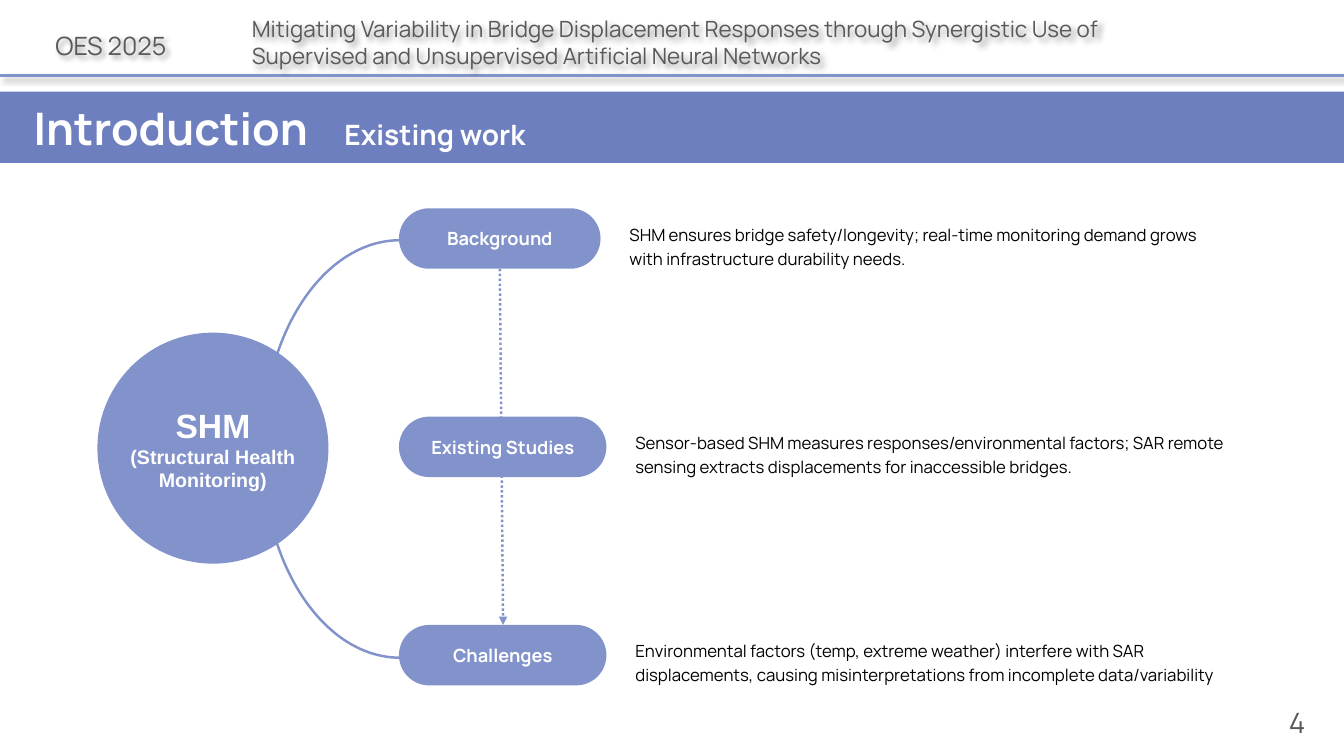
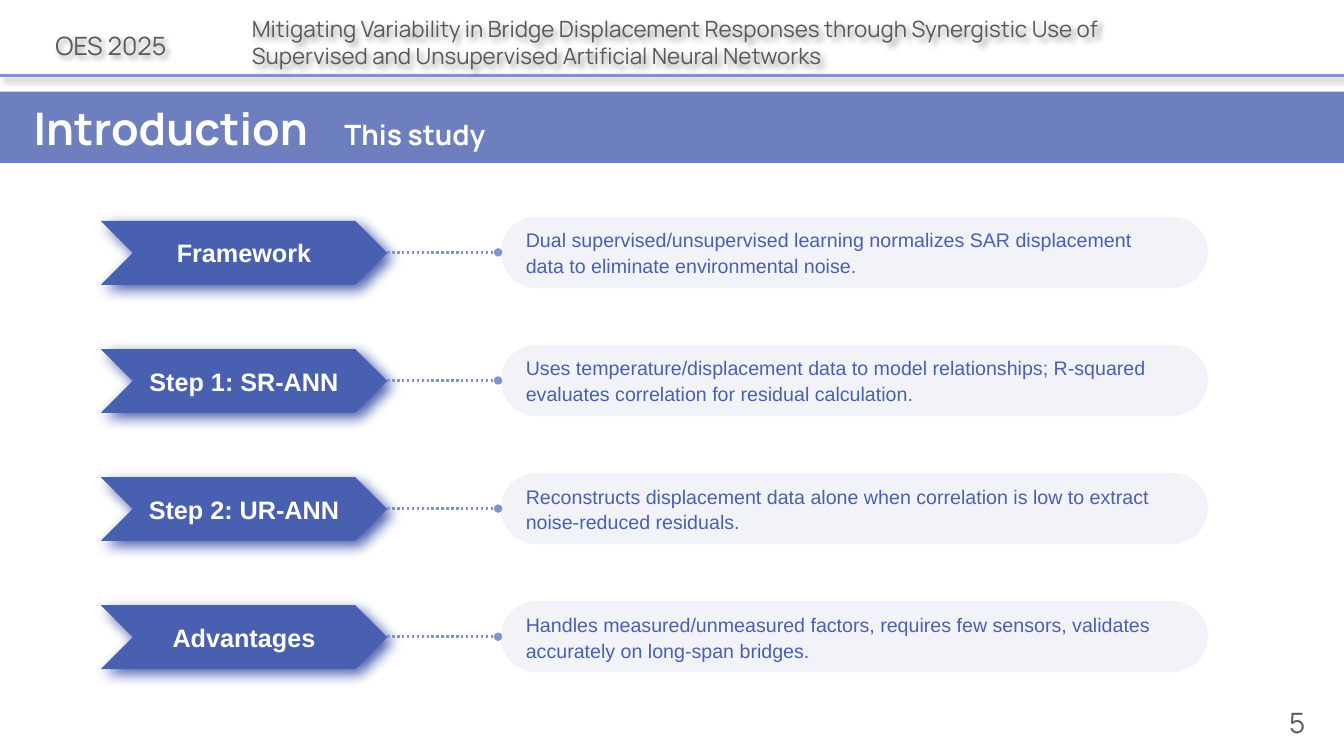
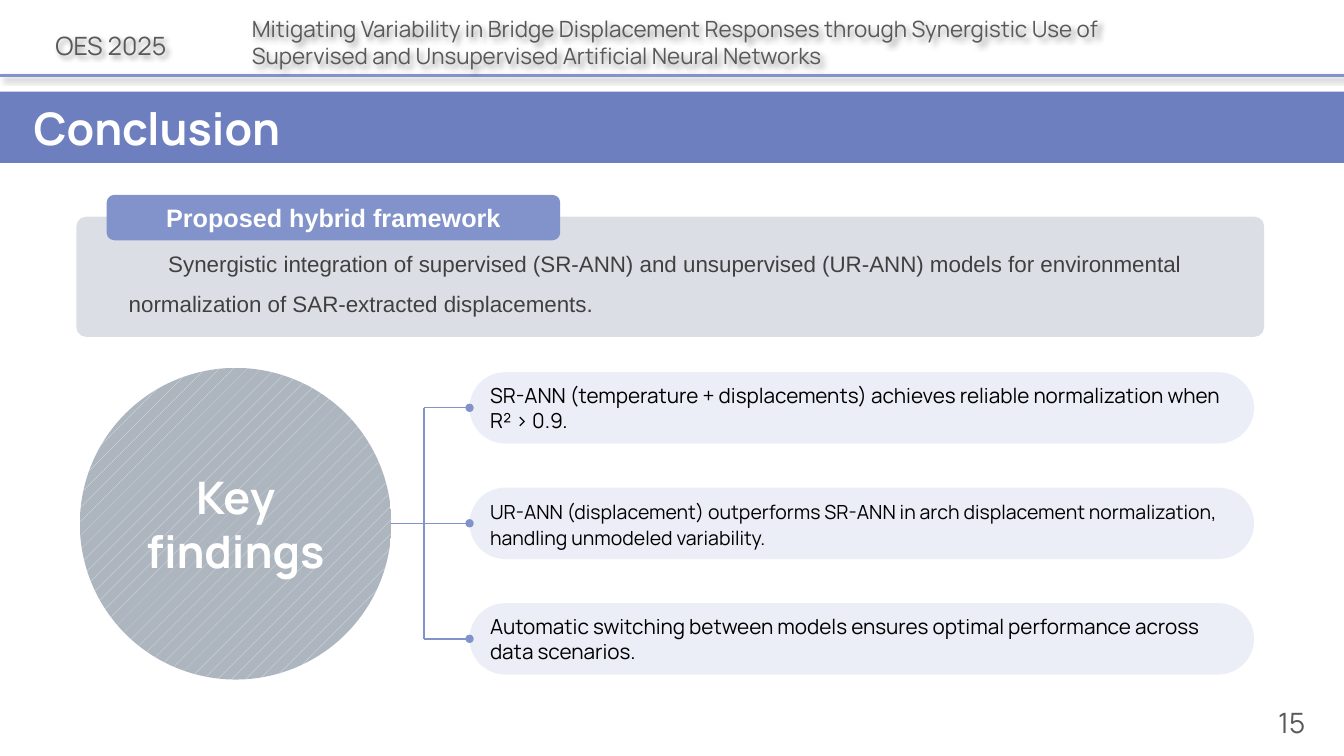
from dataclasses import dataclass

from lxml.etree import SubElement
from pptx import Presentation
from pptx.dml.color import RGBColor
from pptx.enum.dml import MSO_LINE, MSO_PATTERN
from pptx.enum.shapes import MSO_CONNECTOR, MSO_SHAPE
from pptx.enum.text import MSO_ANCHOR, PP_ALIGN
from pptx.oxml.ns import qn
from pptx.util import Inches, Pt

# The slide is a grid of 160 columns by 90 rows of square cells.
COLUMNS, ROWS = 160, 90
CELL = 7.5 / ROWS

COLORS = {
    "blue": "4960B0",
    "periwinkle": "8292CB",
    "navy": "102C53",
    "gray": "595959",
    "charcoal": "404040",
    "steel": "ADB5BF",
    "mist": "E4E6EA",
    "white": "FFFFFF",
    "black": "000000",
}
HEADING_FONT, BODY_FONT = "Manrope", "Arial"
SOFT_SHADOW = {"color": "black", "opacity": 40, "blur": 4, "distance": 3}
GLOW_SHADOW = {"color": "blue", "opacity": 100, "blur": 10, "distance": 5}

CONFERENCE = "OES 2025"
TALK_TITLE = (
    "Mitigating Variability in Bridge Displacement Responses through Synergistic Use of "
    "Supervised and Unsupervised Artificial Neural Networks"
)
TOPICS = [
    ("Background", 24,
     "SHM ensures bridge safety/longevity; real-time monitoring demand grows "
     "with infrastructure durability needs."),
    ("Existing Studies", 24.7,
     "Sensor-based SHM measures responses/environmental factors; SAR remote "
     "sensing extracts displacements for inaccessible bridges."),
    ("Challenges", 24.7,
     "Environmental factors (temp, extreme weather) interfere with SAR "
     "displacements, causing misinterpretations from incomplete data/variability"),
]
STEPS = [
    ("Framework",
     "Dual supervised/unsupervised learning normalizes SAR displacement "
     "data to eliminate environmental noise."),
    ("Step 1: SR-ANN",
     "Uses temperature/displacement data to model relationships; R-squared "
     "evaluates correlation for residual calculation."),
    ("Step 2: UR-ANN",
     "Reconstructs displacement data alone when correlation is low to extract "
     "noise-reduced residuals."),
    ("Advantages",
     "Handles measured/unmeasured factors, requires few sensors, validates "
     "accurately on long-span bridges."),
]
FRAMEWORK = (
    "Synergistic integration of supervised (SR-ANN) and unsupervised (UR-ANN) models "
    "for environmental normalization of SAR-extracted displacements."
)
FINDINGS = [
    ("SR-ANN (temperature + displacements) achieves reliable normalization when R² > 0.9.",
     14.8, 1),
    ("UR-ANN (displacement) outperforms SR-ANN in arch displacement normalization, "
     "handling unmodeled variability.", 13.9, 1.1),
    ("Automatic switching between models ensures optimal performance across data scenarios.",
     14.8, 1),
]


@dataclass
class Box:
    """A region in grid cells."""
    left: float
    top: float
    width: float
    height: float

    def inner(self, left, top, width, height):
        return Box(self.left + left, self.top + top, width, height)

    def point(self, column, row):
        return cells(self.left + column), cells(self.top + row)

    def lengths(self):
        return [cells(n) for n in (self.left, self.top, self.width, self.height)]


def cells(count):
    return Inches(count * CELL)


def color(name):
    return RGBColor.from_string(COLORS[name])


def add_shadow(shape, color, opacity, blur, distance):
    properties = shape._element.spPr
    effects = properties.find(qn("a:effectLst"))
    if effects is None:
        effects = SubElement(properties, qn("a:effectLst"))
    shadow = SubElement(effects, qn("a:outerShdw"), blurRad=str(Pt(blur)),
                        dist=str(Pt(distance)), dir="2700000", algn="tl", rotWithShape="0")
    tint = SubElement(shadow, qn("a:srgbClr"), val=COLORS[color])
    SubElement(tint, qn("a:alpha"), val=str(opacity * 1000))


def add_shape(slide, kind, box, fill=None, opacity=100, adjustments=(), line=None):
    shape = slide.shapes.add_shape(kind, *box.lengths())
    shape.shadow.inherit = False
    for index, value in enumerate(adjustments):
        shape.adjustments[index] = value
    if fill:
        shape.fill.solid()
        shape.fill.fore_color.rgb = color(fill)
        if opacity < 100:
            tint = shape._element.spPr.find(".//" + qn("a:srgbClr"))
            SubElement(tint, qn("a:alpha"), val=str(opacity * 1000))
    else:
        shape.fill.background()
    if line:
        shape.line.color.rgb = color(line)
        shape.line.width = Pt(1.75)
    else:
        shape.line.fill.background()
    return shape


def add_pill(slide, box, fill="periwinkle", opacity=100):
    return add_shape(slide, MSO_SHAPE.ROUNDED_RECTANGLE, box, fill, opacity, [0.5])


def add_line(slide, start, end, width, dotted=False, tail=None):
    line = slide.shapes.add_connector(MSO_CONNECTOR.STRAIGHT, *start, *end)
    line.line.color.rgb = color("periwinkle")
    line.line.width = Pt(width)
    if dotted:
        line.line.dash_style = MSO_LINE.ROUND_DOT
    properties = line._element.spPr
    if tail:
        SubElement(properties.find(qn("a:ln")), qn("a:tailEnd"), type=tail)
    SubElement(properties, qn("a:effectLst"))
    return line


def write(shape, text, size, ink="white", font=HEADING_FONT, bold=False,
          align=PP_ALIGN.LEFT, anchor=MSO_ANCHOR.MIDDLE, margins=(0, 0, 0, 0),
          spacing=None, indent=0, wrap=True, tab=None, same_line=False):
    """Append text to a shape, as a new paragraph unless same_line is set."""
    frame = shape.text_frame
    paragraph = frame.paragraphs[-1]
    if not same_line:
        frame.word_wrap = wrap
        frame.vertical_anchor = anchor
        (frame.margin_left, frame.margin_top,
         frame.margin_right, frame.margin_bottom) = [cells(n) for n in margins]
        if paragraph.runs:
            paragraph = frame.add_paragraph()
        paragraph.alignment = align
        if spacing:
            paragraph.line_spacing = spacing
        properties = paragraph._p.get_or_add_pPr()
        if indent:
            properties.set("marL", str(cells(indent)))
            properties.set("indent", str(cells(indent)))
        if tab:
            stops = SubElement(properties, qn("a:tabLst"))
            SubElement(stops, qn("a:tab"), pos=str(cells(tab)), algn="l")
    run = paragraph.add_run()
    run.text = text
    run.font.size = Pt(size)
    run.font.name = font
    run.font.bold = bold
    run.font.color.rgb = color(ink)
    return shape


def add_text(slide, box, text, size, **text_format):
    return write(slide.shapes.add_textbox(*box.lengths()), text, size, **text_format)


def add_frame(presentation, title, number, subtitle=None):
    """Add a slide with the shared header, title band and page number."""
    slide = presentation.slides.add_slide(presentation.slide_layouts[6])
    page = Box(0, 0, COLUMNS, ROWS)
    header = {"ink": "gray", "anchor": MSO_ANCHOR.BOTTOM}
    shadowed = [
        add_line(slide, page.point(0, 9), page.point(COLUMNS, 9), 2),
        add_text(slide, page.inner(4.4, 1.7, 17.6, 5.5), CONFERENCE, 18,
                 align=PP_ALIGN.CENTER, **header),
        add_text(slide, page.inner(30, 1.1, 114, 7.1), TALK_TITLE, 16, **header),
    ]
    for shape in shadowed:
        add_shadow(shape, **SOFT_SHADOW)
    band = add_shape(slide, MSO_SHAPE.RECTANGLE, page.inner(0, 10.9, COLUMNS, 8.5),
                     "blue", 80)
    write(band, title, 32, bold=True, margins=(4, 0.6, 1.2, 0.6), tab=37)
    if subtitle:
        write(band, "\t" + subtitle, 20, bold=True, same_line=True)
    add_text(slide, page.inner(141.7, 83.2, 13.7, 4.8), number, 20,
             align=PP_ALIGN.RIGHT, **header)
    return slide


def add_hub(slide, box):
    """Add the round subject with the arc that reaches the outer topics."""
    add_shape(slide, MSO_SHAPE.ARC, box.inner(19.6, 3.8, 32.8, 49.7),
              adjustments=[54, 162], line="periwinkle")
    circle = add_shape(slide, MSO_SHAPE.OVAL, box.inner(0, 14.8, 27.5, 27.5), "periwinkle")
    for text, size in [("SHM", 24), ("(Structural Health", 14), ("Monitoring)", 14)]:
        write(circle, text, size, font=BODY_FONT, bold=True,
              align=PP_ALIGN.CENTER, wrap=False)


def add_topics(slide, box, pitch=24.8, height=7.2):
    add_line(slide, box.point(12, height), box.point(12.4, 2 * pitch), 1.75,
             dotted=True, tail="triangle")
    for index, (name, width, description) in enumerate(TOPICS):
        top = index * pitch
        pill = add_pill(slide, box.inner(0, top, width, height))
        write(pill, name, 13, bold=True, align=PP_ALIGN.CENTER)
        left = width + 2
        add_text(slide, box.inner(left, top, box.width - left, height), description, 12,
                 ink="black", anchor=MSO_ANCHOR.TOP, margins=[1.44] * 4, spacing=1.2)


def add_step(slide, box, name, description):
    add_pill(slide, box.inner(47.6, 0, 84.2, box.height), opacity=10)
    chevron = add_shape(slide, MSO_SHAPE.CHEVRON, box.inner(0, 0.5, 34.1, 7.6),
                        "blue", adjustments=[0.5])
    add_shadow(chevron, **GLOW_SHADOW)
    write(chevron, name, 18, font=BODY_FONT, bold=True, align=PP_ALIGN.CENTER,
          margins=(1.2, 0.6, 1.2, 0.6))
    middle = box.height / 2
    add_line(slide, box.point(34.1, middle), box.point(47.3, middle), 1.75,
             dotted=True, tail="oval")
    add_text(slide, box.inner(50.6, 1.1, 77.2, 6.2), description, 14, ink="blue",
             font=BODY_FONT, anchor=MSO_ANCHOR.TOP, spacing=1.1)


def add_framework_panel(slide, box):
    panel = add_shape(slide, MSO_SHAPE.ROUNDED_RECTANGLE,
                      box.inner(0, 2.6, box.width, 14.3), "navy", 15, [0.08])
    write(panel, FRAMEWORK, 16, ink="charcoal", font=BODY_FONT, spacing=1.5,
          indent=4.7, margins=(1.2, 0.6, 1.2, 0.6))
    badge = add_shape(slide, MSO_SHAPE.ROUNDED_RECTANGLE, box.inner(3.6, 0, 54, 5.4),
                      "periwinkle")
    write(badge, "Proposed hybrid framework", 18, font=BODY_FONT, bold=True,
          align=PP_ALIGN.CENTER)


def add_findings(slide, box, pitch=13.75, height=8.5):
    trunk, pills = 41, 46.4
    rows = [0.5 + index * pitch for index in range(len(FINDINGS))]
    centers = [row + height / 2 for row in rows]
    add_line(slide, box.point(trunk, centers[0]), box.point(trunk, centers[-1]), 1)
    for start, center in zip((trunk, 35.5, trunk), centers):
        add_line(slide, box.point(start, center), box.point(pills, center), 1, tail="oval")
    for row, (text, size, spacing) in zip(rows, FINDINGS):
        pill = add_pill(slide, box.inner(pills, row, 93.4, height), opacity=15)
        write(pill, text, size, ink="black", spacing=spacing, margins=(1.2, 0, 1.2, 0))
    circle = add_shape(slide, MSO_SHAPE.OVAL, box.inner(0, 0, 37.1, 37.1))
    circle.fill.patterned()
    circle.fill.pattern = MSO_PATTERN.PERCENT_5
    circle.fill.fore_color.rgb = color("mist")
    circle.fill.back_color.rgb = color("steel")
    write(circle, "Key findings", 32, bold=True, align=PP_ALIGN.CENTER,
          margins=(1.2, 0.6, 1.2, 0.6))


def main():
    presentation = Presentation()
    presentation.slide_width = cells(COLUMNS)
    presentation.slide_height = cells(ROWS)

    slide = add_frame(presentation, "Introduction", "4", "Existing work")
    add_hub(slide, Box(11.6, 24.8, 52.4, 56.8))
    add_topics(slide, Box(47.5, 24.8, 100.1, 56.8))

    slide = add_frame(presentation, "Introduction", "5", "This study")
    for index, (name, description) in enumerate(STEPS):
        add_step(slide, Box(12, 25.8 + index * 15.25, 131.8, 8.5), name, description)

    slide = add_frame(presentation, "Conclusion", "15")
    add_framework_panel(slide, Box(9.1, 23.2, 141.4, 16.9))
    add_findings(slide, Box(9.5, 43.8, 139.8, 37.1))

    presentation.save("out.pptx")


if __name__ == "__main__":
    main()
